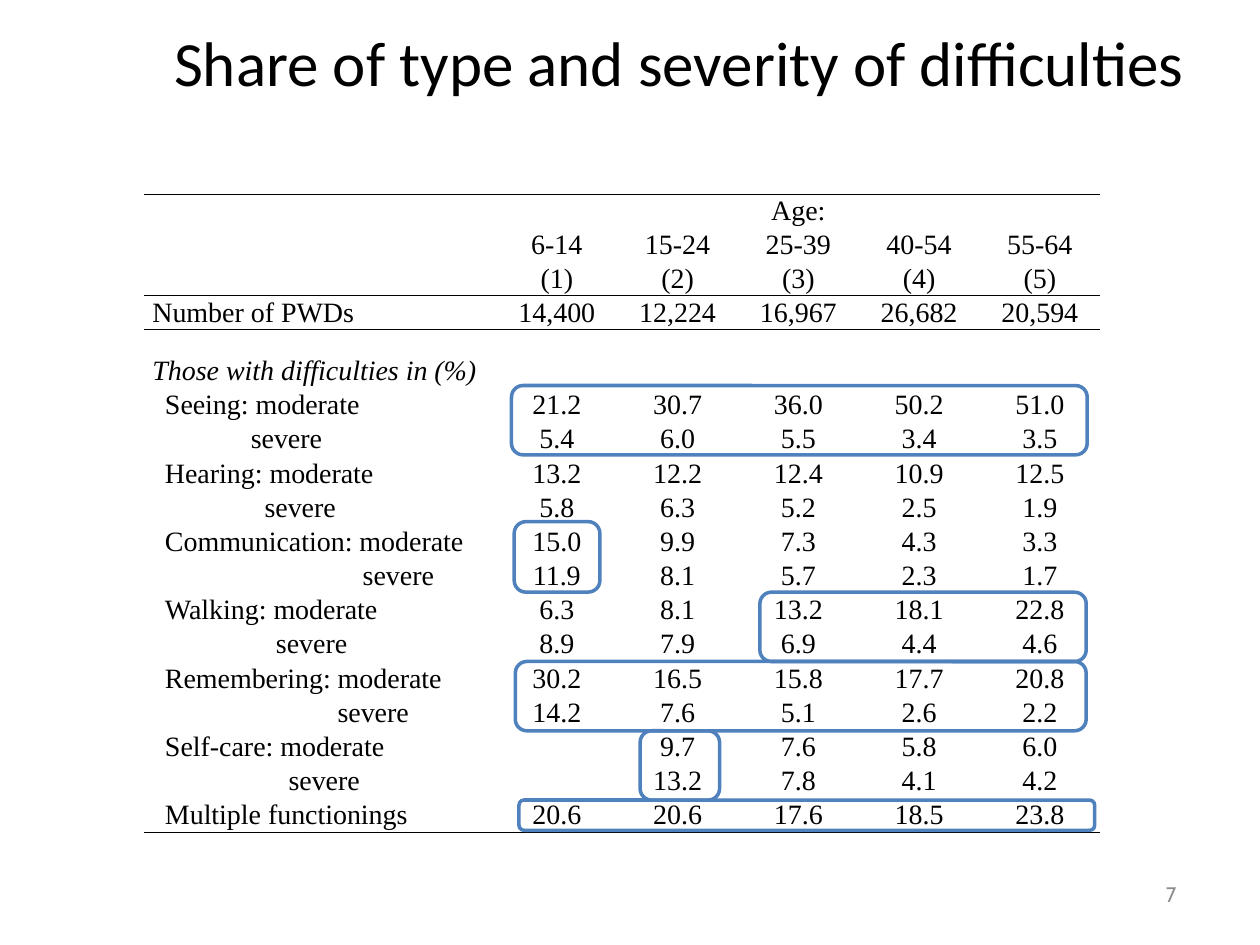
import pptx
import pptx.util
import pptx.dml.color
import pptx.enum.shapes
import pptx.enum.text
from lxml import etree

Pt = pptx.util.Pt
RGBColor = pptx.dml.color.RGBColor
CENTER = pptx.enum.text.PP_ALIGN.CENTER
LEFT = pptx.enum.text.PP_ALIGN.LEFT
MIDDLE = pptx.enum.text.MSO_ANCHOR.MIDDLE

BLACK = RGBColor(0x00, 0x00, 0x00)
GRAY = RGBColor(0x8C, 0x8C, 0x8C)
BLUE = RGBColor(0x4F, 0x81, 0xBD)

TITLE = "Share of type and severity of difficulties"
PAGE_NUMBER = "7"
AGES = ["6-14", "15-24", "25-39", "40-54", "55-64"]
PERSONS = ["14,400", "12,224", "16,967", "26,682", "20,594"]
DIFFICULTIES = [
    ("Seeing", 56.2, "21.2 30.7 36.0 50.2 51.0", "5.4 6.0 5.5 3.4 3.5"),
    ("Hearing", 64.1, "13.2 12.2 12.4 10.9 12.5", "5.8 6.3 5.2 2.5 1.9"),
    ("Communication", 120.2, "15.0 9.9 7.3 4.3 3.3", "11.9 8.1 5.7 2.3 1.7"),
    ("Walking", 70.6, "6.3 8.1 13.2 18.1 22.8", "8.9 7.9 6.9 4.4 4.6"),
    ("Remembering", 105.8, "30.2 16.5 15.8 17.7 20.8", "14.2 7.6 5.1 2.6 2.2"),
    ("Self-care", 77.8, "9.7 7.6 5.8 6.0", "13.2 7.8 4.1 4.2"),
]
MULTIPLE = ["20.6", "20.6", "17.6", "18.5", "23.8"]
HIGHLIGHTS = [
    (292.3, 220.3, 329, 39.6),
    (294.5, 378, 326.2, 39.6),
    (296.6, 457.2, 329, 17.3),
    (293.8, 298.1, 49, 40.3),
    (365.8, 417.6, 45.4, 39.6),
    (434.2, 338.4, 186.5, 39.6),
]

TABLE_LEFT, TABLE_TOP = 82.1, 111.2
COLUMN_WIDTHS = [201.6] + [69] * len(AGES)
ROW_HEIGHTS = [18.5] * 3 + [19.55, 13.9] + [19.55] * 14
ROW_RULES = {0: "a:lnT", 2: "a:lnB", 3: "a:lnT", 18: "a:lnB"}
LABEL_INDENT = 7.2
NO_STYLE = "{2D5ABB26-0587-4C30-8999-92F81FD0307C}"

TITLE_FORMAT = {"size": Pt(36), "name": "Calibri"}
NUMBER_FORMAT = {"size": Pt(12), "name": "Cabin"}
CELL_FORMAT = {"size": Pt(16), "name": "Times New Roman"}
CELL_LAYOUT = {"margin_left": Pt(5), "margin_right": Pt(5), "margin_top": 0,
               "margin_bottom": 0, "vertical_anchor": MIDDLE}


def set_attributes(target, values):
    for name, value in values.items():
        setattr(target, name, value)


def write(para, text, values, color, alignment=CENTER):
    para.alignment = alignment
    span = para.add_run()
    span.text = text
    set_attributes(span.font, values)
    span.font.color.rgb = color
    return span


def add_text(page, place, text, values, color):
    box = page.shapes.add_textbox(*[Pt(length) for length in place])
    set_attributes(box.text_frame, {"word_wrap": True, "vertical_anchor": MIDDLE})
    write(box.text_frame.paragraphs[0], text, values, color)


def add_rule(cell, tag):
    line = pptx.oxml.parse_xml(
        f'<{tag} xmlns:a="http://schemas.openxmlformats.org/drawingml/2006/main" w="{Pt(1)}">'
        f'<a:solidFill><a:srgbClr val="{BLACK}"/></a:solidFill></{tag}>')
    cell._tc.get_or_add_tcPr().insert(0, line)


def table_rows():
    rows = [("", 0, ["Age:"]), ("", 0, AGES),
            ("", 0, [f"({number})" for number in range(1, len(AGES) + 1)]),
            ("Number of PWDs", 0, PERSONS), ("", 0, []),
            ("Those with difficulties in (%)", 0, [])]
    for name, indent, moderate, severe in DIFFICULTIES:
        rows.append((f"{name}: moderate", LABEL_INDENT, moderate.split()))
        rows.append(("severe", indent, severe.split()))
    rows.append(("Multiple functionings", LABEL_INDENT, MULTIPLE))
    return rows


def add_difficulty_table(page):
    rows = table_rows()
    table = page.shapes.add_table(
        len(rows), len(COLUMN_WIDTHS), Pt(TABLE_LEFT), Pt(TABLE_TOP),
        Pt(sum(COLUMN_WIDTHS)), Pt(sum(ROW_HEIGHTS))).table
    set_attributes(table, {"first_row": False, "horz_banding": False})
    table._tbl.tblPr[0].text = NO_STYLE
    for column, width in zip(table.columns, COLUMN_WIDTHS):
        column.width = Pt(width)
    for row, height in zip(table.rows, ROW_HEIGHTS):
        row.height = Pt(height)
    table.cell(0, 1).merge(table.cell(0, len(AGES)))

    for row_index, (label, indent, values) in enumerate(rows):
        blanks = [""] * (len(AGES) - len(values))
        figures = values + blanks if row_index == 0 else blanks + values
        for column_index, text in enumerate([label] + figures):
            cell = table.cell(row_index, column_index)
            set_attributes(cell, CELL_LAYOUT)
            cell.fill.background()
            if row_index in ROW_RULES:
                add_rule(cell, ROW_RULES[row_index])
            para = cell.text_frame.paragraphs[0]
            if not text:
                para._p.get_or_add_endParaRPr().set("sz", "1000")
                continue
            span = write(para, text, CELL_FORMAT, BLACK, CENTER if column_index else LEFT)
            if column_index == 0:
                span.font.italic = label.startswith("Those")
                para._p.get_or_add_pPr().set("indent", str(Pt(indent)))


def add_highlight(page, place):
    frame = page.shapes.add_shape(
        pptx.enum.shapes.MSO_SHAPE.ROUNDED_RECTANGLE, *[Pt(length) for length in place])
    frame.shadow.inherit = False
    frame.fill.background()
    frame.line.color.rgb = BLUE
    frame.line.width = Pt(2)


def main():
    deck = pptx.Presentation()
    set_attributes(deck, {"slide_width": Pt(720), "slide_height": Pt(540)})
    page = deck.slides.add_slide(deck.slide_layouts[6])
    add_text(page, (82.1, 3.6, 612, 62.6), TITLE, TITLE_FORMAT, BLACK)
    add_text(page, (637.9, 496.8, 62.6, 28.8), PAGE_NUMBER, NUMBER_FORMAT, GRAY)
    add_difficulty_table(page)
    for place in HIGHLIGHTS:
        add_highlight(page, place)
    deck.save("out.pptx")


if __name__ == "__main__":
    main()
